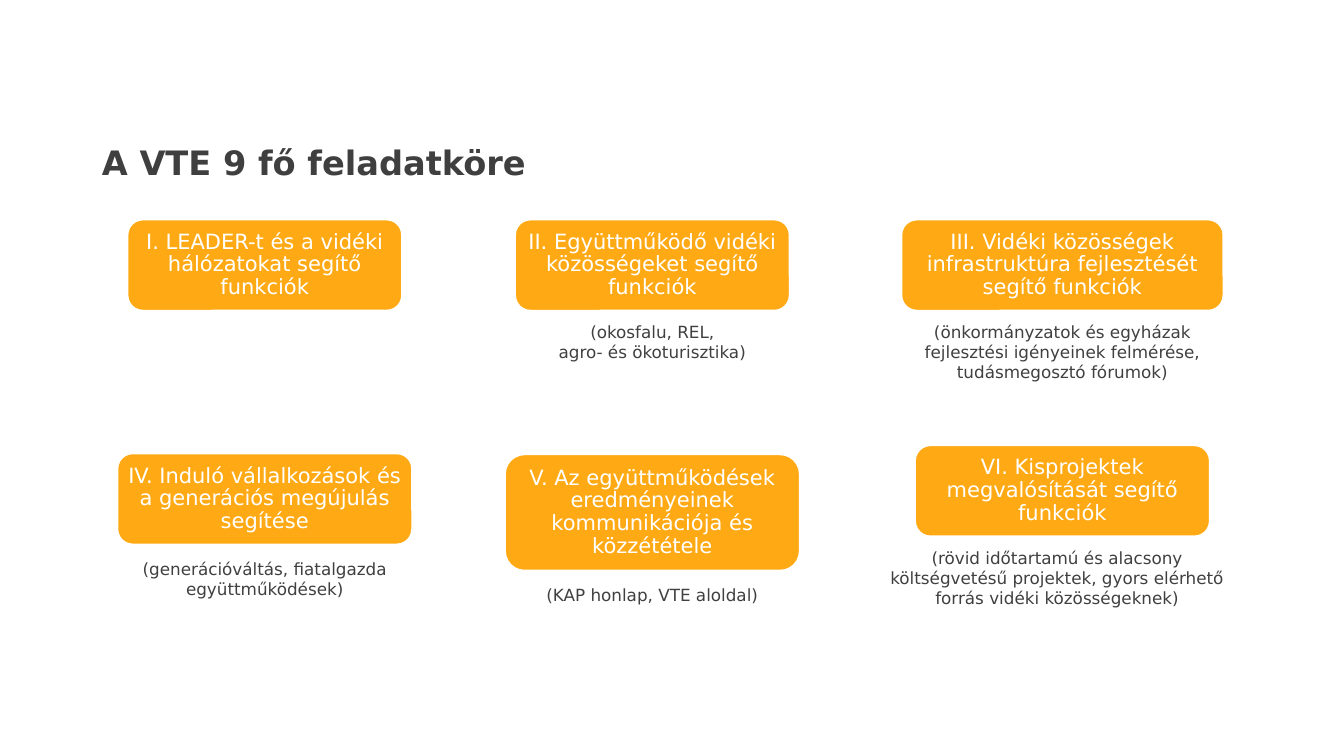
from pptx import Presentation
from pptx.dml.color import RGBColor
from pptx.enum.shapes import MSO_SHAPE as Preset
from pptx.enum.text import MSO_ANCHOR as Anchor, MSO_AUTO_SIZE as AutoSize, PP_ALIGN as Align
from pptx.util import Inches, Pt

WIDTH, HEIGHT = Inches(13.33), Inches(7.5)
FONT = "DejaVu Sans"
ORANGE, WHITE, TITLE_GREY, NOTE_GREY = "FFAA15", "FFFFFF", "3F3F3F", "404040"
LEFT, MIDDLE, RIGHT = 19.7, 48.54, 79.05

TASKS = [
    (LEFT, 29.07, 20.4, 12, "I. LEADER-t és a vidéki hálózatokat segítő funkciók"),
    (MIDDLE, 29.07, 20.4, 12, "II. Együttműködő vidéki közösségeket segítő funkciók"),
    (RIGHT, 29.07, 23.93, 12,
     "III. Vidéki közösségek infrastruktúra fejlesztését segítő funkciók"),
    (LEFT, 60, 21.9, 12, "IV. Induló vállalkozások és a generációs megújulás segítése"),
    (MIDDLE, 60.13, 21.9, 15.33,
     "V. Az együttműködések eredményeinek kommunikációja és közzététele"),
    (RIGHT, 58.93, 21.9, 12, "VI. Kisprojektek megvalósítását segítő funkciók"),
]

NOTES = [
    (MIDDLE, 41.87, 23.93, 2, ["(okosfalu, REL,", "agro- és ökoturisztika)"]),
    (RIGHT, 41.87, 27.08, 3,
     ["(önkormányzatok és egyházak fejlesztési igényeinek felmérése, tudásmegosztó fórumok)"]),
    (LEFT, 73.2, 27.08, 2, ["(generációváltás, fiatalgazda együttműködések)"]),
    (MIDDLE, 76.67, 19.28, 1, ["(KAP honlap, VTE aloldal)"]),
    (78.66, 71.73, 27.98, 3,
     ["(rövid időtartamú és alacsony költségvetésű projektek, "
      "gyors elérhető forrás vidéki közösségeknek)"]),
]


def color(hex_code):
    return RGBColor.from_string(hex_code)


def across(percent):
    return round(WIDTH * percent / 100)


def down(percent):
    return round(HEIGHT * percent / 100)


def centred_area(centre, top, width, height):
    return across(centre - width / 2), down(top), across(width), down(height)


def set_insets(frame, inset):
    frame.margin_left = frame.margin_right = Inches(inset)
    frame.margin_top = frame.margin_bottom = Inches(inset)


def write(paragraph, wording, size, hex_code, align, bold=False):
    paragraph.alignment = align
    run = paragraph.add_run()
    run.text = wording
    run.font.name = FONT
    run.font.size = Pt(size)
    run.font.bold = bold
    run.font.color.rgb = color(hex_code)


def add_heading(slide, wording):
    heading = slide.shapes.title
    heading.left, heading.top = across(7.2), down(19.2)
    heading.width, heading.height = across(64.29), down(5.2)
    frame = heading.text_frame
    frame.auto_size = AutoSize.NONE
    frame.vertical_anchor = Anchor.MIDDLE
    set_insets(frame, 0.05)
    paragraph = frame.paragraphs[0]
    paragraph.line_spacing = 0.9
    write(paragraph, wording, 24, TITLE_GREY, Align.LEFT, bold=True)


def add_task(slide, centre, top, width, height, wording):
    task = slide.shapes.add_shape(
        Preset.ROUNDED_RECTANGLE, *centred_area(centre, top, width, height))
    task.shadow.inherit = False
    task.fill.solid()
    task.fill.fore_color.rgb = color(ORANGE)
    task.line.color.rgb = color(WHITE)
    task.line.width = Pt(1)
    frame = task.text_frame
    frame.word_wrap = True
    frame.vertical_anchor = Anchor.MIDDLE
    set_insets(frame, 0.06)
    paragraph = frame.paragraphs[0]
    paragraph.line_spacing = 0.9
    write(paragraph, wording, 15, WHITE, Align.CENTER)


def add_note(slide, centre, top, width, rows, wordings):
    height = 1.33 + 2.7 * rows
    note = slide.shapes.add_textbox(*centred_area(centre, top, width, height))
    frame = note.text_frame
    frame.word_wrap = True
    frame.auto_size = AutoSize.SHAPE_TO_FIT_TEXT
    for index, wording in enumerate(wordings):
        paragraph = frame.add_paragraph() if index else frame.paragraphs[0]
        write(paragraph, wording, 12, NOTE_GREY, Align.CENTER)


def main():
    deck = Presentation()
    deck.slide_width, deck.slide_height = WIDTH, HEIGHT
    slide = deck.slides.add_slide(deck.slide_layouts[5])
    add_heading(slide, "A VTE 9 fő feladatköre")
    for task in TASKS:
        add_task(slide, *task)
    for note in NOTES:
        add_note(slide, *note)
    deck.save("out.pptx")


if __name__ == "__main__":
    main()
